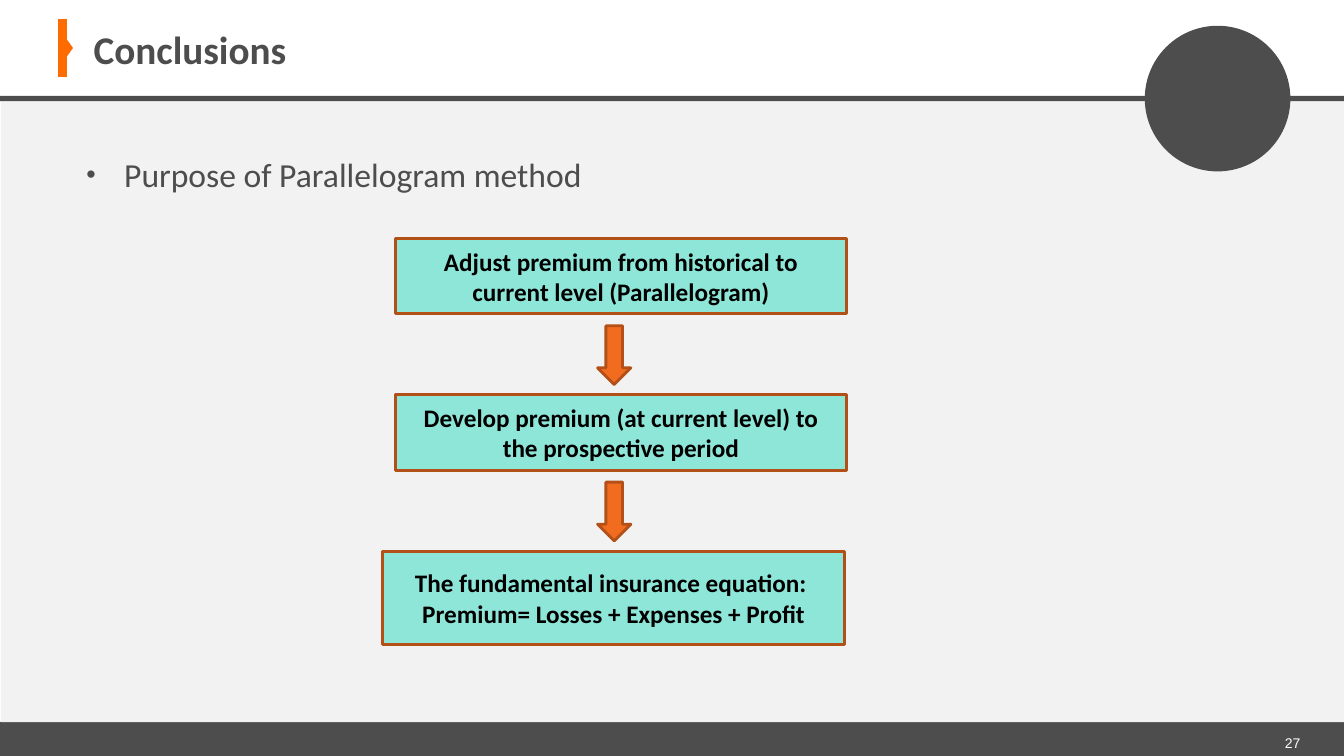
from dataclasses import dataclass

from lxml import etree
from pptx import Presentation
from pptx.dml.color import RGBColor
from pptx.enum.shapes import MSO_CONNECTOR, MSO_SHAPE
from pptx.enum.text import MSO_ANCHOR, PP_ALIGN
from pptx.oxml.ns import qn
from pptx.util import Cm, Pt

RECT, OVAL = MSO_SHAPE.RECTANGLE, MSO_SHAPE.OVAL
TRIANGLE, DOWN_ARROW = MSO_SHAPE.ISOSCELES_TRIANGLE, MSO_SHAPE.DOWN_ARROW
STRAIGHT = MSO_CONNECTOR.STRAIGHT
LEFT, CENTER, RIGHT = PP_ALIGN.LEFT, PP_ALIGN.CENTER, PP_ALIGN.RIGHT
TOP, MIDDLE = MSO_ANCHOR.TOP, MSO_ANCHOR.MIDDLE


@dataclass(frozen=True)
class Theme:
    dark: str = "4D4D4D"
    panel: str = "F2F2F2"
    accent: str = "FE6B01"
    step: str = "8EE6D9"
    arrow: str = "F26C20"
    outline: str = "B35018"
    black: str = "000000"
    white: str = "FFFFFF"
    font: str = "Calibri"
    number_font: str = "Arial"
    title_size: int = 28
    body_size: int = 24
    step_size: int = 18
    number_size: int = 10


THEME = Theme()
SLIDE_W, SLIDE_H = 33.87, 19.05
STEP_PITCH = 3.94
STEPS = [
    ((9.96, 11.38, 1.9),
     ["Adjust premium from historical to current level (Parallelogram)"]),
    ((9.96, 11.38, 1.9),
     ["Develop premium (at current level) to the prospective period"]),
    ((9.65, 11.63, 2.36),
     ["The fundamental insurance equation: ",
      "Premium= Losses + Expenses + Profit"]),
]


def add_block(slide, kind, x, y, w, h, fill, outline=None):
    sp = slide.shapes.add_shape(kind, Cm(x), Cm(y), Cm(w), Cm(h))
    sp.shadow.inherit = False
    sp.fill.solid()
    sp.fill.fore_color.rgb = RGBColor.from_string(fill)
    if outline:
        sp.line.color.rgb = RGBColor.from_string(outline)
        sp.line.width = Pt(2)
    else:
        sp.line.fill.background()
    return sp


def write(sp, lines, size, color, bold=False, align=LEFT, anchor=TOP,
          font=THEME.font):
    """Put one paragraph per line into a shape and return the text frame."""
    tf = sp.text_frame
    tf.word_wrap = True
    tf.vertical_anchor = anchor
    for i, line in enumerate(lines):
        p = tf.add_paragraph() if i else tf.paragraphs[0]
        p.alignment = align
        r = p.add_run()
        r.text = line
        r.font.name = font
        r.font.size = Pt(size)
        r.font.bold = bold
        r.font.color.rgb = RGBColor.from_string(color)
    return tf


def add_text(slide, x, y, w, h, text, size, color, **style):
    sp = slide.shapes.add_textbox(Cm(x), Cm(y), Cm(w), Cm(h))
    return write(sp, [text], size, color, **style)


def set_bullet(p, color):
    pPr = p._p.get_or_add_pPr()
    pPr.set("marL", str(Cm(0.95)))
    pPr.set("indent", str(-Cm(0.95)))
    clr = etree.SubElement(pPr, qn("a:buClr"))
    etree.SubElement(clr, qn("a:srgbClr"), val=color)
    etree.SubElement(pPr, qn("a:buSzPct"), val="80000")
    etree.SubElement(pPr, qn("a:buFont"), typeface="Arial")
    etree.SubElement(pPr, qn("a:buChar"), char="•")


def add_title_mark(slide):
    bar = slide.shapes.add_connector(STRAIGHT, Cm(1.58), Cm(0.49),
                                     Cm(1.58), Cm(1.95))
    bar.line.color.rgb = RGBColor.from_string(THEME.accent)
    bar.line.width = Pt(6)
    etree.SubElement(bar._element.spPr, qn("a:effectLst"))
    tip = add_block(slide, TRIANGLE, 1.5, 1.12, 0.5, 0.18, THEME.accent)
    tip.rotation = 90


def add_frame(slide):
    """Draw the footer, panel, header rule, title mark and disc."""
    add_block(slide, RECT, 0, 18.19, SLIDE_W, 0.86, THEME.dark)
    tf = add_text(slide, 32.08, 18.16, 0.94, 0.82, "27", THEME.number_size,
                  THEME.white, align=RIGHT, font=THEME.number_font)
    tf.word_wrap = False
    tf.paragraphs[0].line_spacing = 1.5
    add_block(slide, RECT, 0.02, 2.54, SLIDE_W - 0.02, 15.66, THEME.panel)
    add_block(slide, RECT, 0, 2.42, SLIDE_W, 0.13, THEME.dark)
    add_title_mark(slide)
    add_block(slide, OVAL, 28.85, 0.65, 3.67, 3.67, THEME.dark)


def add_steps(slide):
    for i, ((x, w, h), lines) in enumerate(STEPS):
        offset = i * STEP_PITCH
        sp = add_block(slide, RECT, x, 6.01 + offset, w, h,
                       THEME.step, THEME.outline)
        write(sp, lines, THEME.step_size, THEME.black, bold=True,
              align=CENTER, anchor=MIDDLE)
        if i < len(STEPS) - 1:
            add_block(slide, DOWN_ARROW, 15.06, 8.21 + offset, 0.84, 1.48,
                      THEME.arrow, THEME.outline)


def main():
    prs = Presentation()
    prs.slide_width, prs.slide_height = Cm(SLIDE_W), Cm(SLIDE_H)
    slide = prs.slides.add_slide(prs.slide_layouts[6])
    add_frame(slide)
    add_text(slide, 2.11, 0.51, 25.93, 1.45, "Conclusions",
             THEME.title_size, THEME.dark, bold=True)
    tf = add_text(slide, 1.93, 3.61, 30.02, 13.56,
                  "Purpose of Parallelogram method",
                  THEME.body_size, THEME.dark)
    set_bullet(tf.paragraphs[0], THEME.dark)
    tf.paragraphs[0].line_spacing = 1.14
    add_steps(slide)
    prs.save("out.pptx")


if __name__ == "__main__":
    main()
